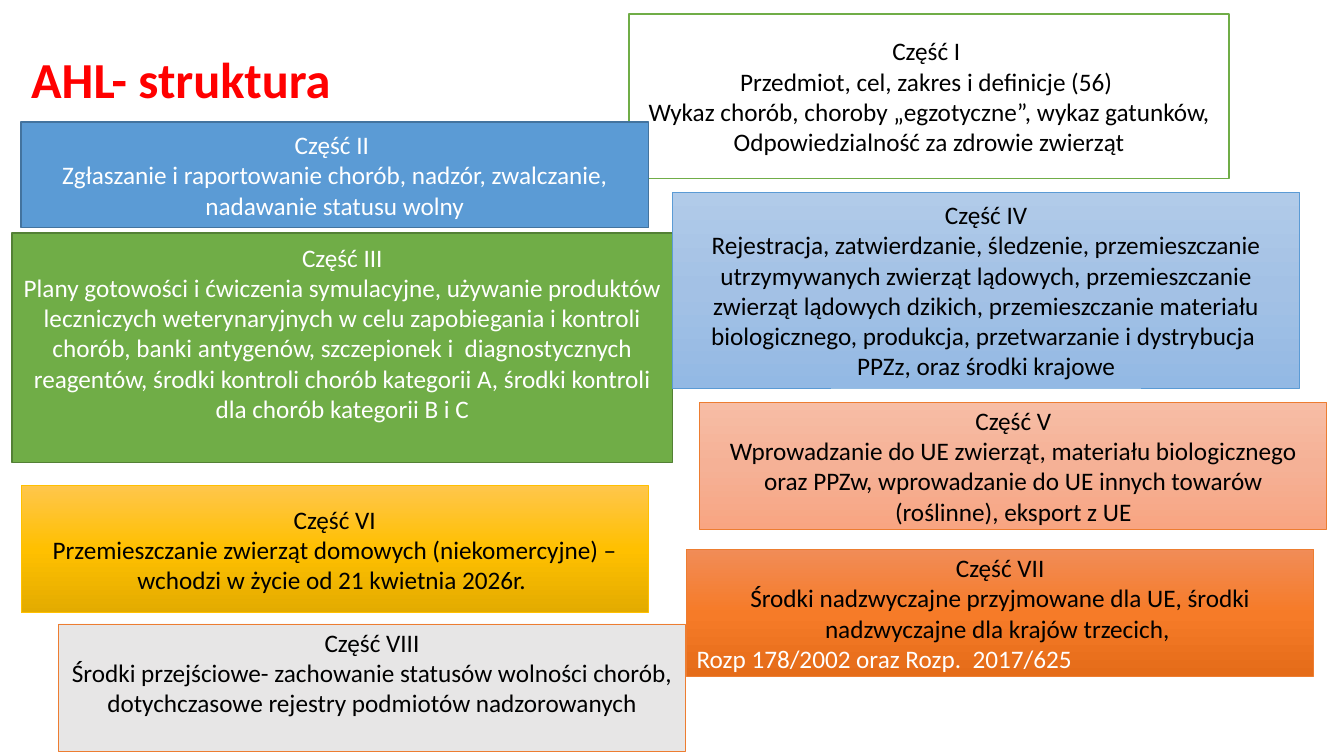
from copy import deepcopy

from pptx import Presentation
from pptx.dml.color import RGBColor
from pptx.enum.shapes import MSO_SHAPE
from pptx.enum.text import MSO_ANCHOR, PP_ALIGN
from pptx.util import Pt

RECTANGLE = MSO_SHAPE.RECTANGLE
MIDDLE, BOTTOM = MSO_ANCHOR.MIDDLE, MSO_ANCHOR.BOTTOM
LEFT, CENTER = PP_ALIGN.LEFT, PP_ALIGN.CENTER

PX = 9144  # EMU, 100 px to the inch
FONT = "Calibri"
TITLE_LAYOUT = 5
DOWNWARD = 270
TEXT_LINE = 30

BLACK = RGBColor(0x00, 0x00, 0x00)
WHITE = RGBColor(0xFF, 0xFF, 0xFF)
RED = RGBColor(0xFF, 0x00, 0x00)
GREEN = RGBColor(0x70, 0xAD, 0x47)
DARK_GREEN = RGBColor(0x53, 0x80, 0x35)
BLUE = RGBColor(0x5B, 0x9B, 0xD5)
DARK_BLUE = RGBColor(0x43, 0x73, 0x9E)
ORANGE = RGBColor(0xED, 0x7D, 0x31)
GOLD = RGBColor(0xFF, 0xC0, 0x00)
GREY = RGBColor(0xE7, 0xE6, 0xE6)
BLUE_FADE = (RGBColor(0xB1, 0xCB, 0xE9), RGBColor(0xA3, 0xC1, 0xE5), RGBColor(0x93, 0xB9, 0xE4))
PEACH_FADE = (RGBColor(0xF7, 0xBD, 0xA5), RGBColor(0xF5, 0xB1, 0x96), RGBColor(0xF8, 0xA5, 0x82))
GOLD_FADE = (RGBColor(0xFF, 0xC6, 0x4B), GOLD, RGBColor(0xE3, 0xAB, 0x00))
ORANGE_FADE = (RGBColor(0xF1, 0x8C, 0x57), RGBColor(0xF6, 0x7B, 0x28), RGBColor(0xE5, 0x6C, 0x19))

TITLE = "AHL- struktura"
TITLE_BOX = (21, 0, 1199, 109)
REGULATIONS = "Rozp 178/2002 oraz Rozp.  2017/625"

# box, fill colours, line colour, line width, text colour, space under the text, paragraphs
PARTS = [
    ((624, 14, 595, 163), (WHITE,), GREEN, 1, BLACK, 0, [
        "Część I ",
        "Przedmiot, cel, zakres i definicje (56) ",
        "Wykaz chorób, choroby „egzotyczne”, wykaz gatunków,",
        "Odpowiedzialność za zdrowie zwierząt"]),
    ((21, 121, 622, 105), (BLUE,), DARK_BLUE, 1, WHITE, 0, [
        "Część II ",
        "Zgłaszanie i raportowanie chorób, nadzór, zwalczanie, nadawanie statusu wolny"]),
    ((12, 231, 655, 228), (GREEN,), DARK_GREEN, 1, WHITE, TEXT_LINE, [
        "Część III",
        "Plany gotowości i ćwiczenia symulacyjne, używanie produktów leczniczych "
        "weterynaryjnych w celu zapobiegania i kontroli chorób, banki antygenów, "
        "szczepionek i  diagnostycznych reagentów, środki kontroli chorób kategorii A, "
        "środki kontroli dla chorób kategorii B i C"]),
    ((667, 191, 622, 194), BLUE_FADE, BLUE, 0.5, BLACK, 0, [
        "Część IV",
        "Rejestracja, zatwierdzanie, śledzenie, przemieszczanie utrzymywanych zwierząt "
        "lądowych, przemieszczanie zwierząt lądowych dzikich, przemieszczanie materiału "
        "biologicznego, produkcja, przetwarzanie i dystrybucja  PPZz, oraz środki krajowe"]),
    ((694, 399, 622, 126), PEACH_FADE, ORANGE, 0.5, BLACK, 0, [
        "Część V",
        "Wprowadzanie do UE zwierząt, materiału biologicznego oraz PPZw, "
        "wprowadzanie do UE innych towarów (roślinne), eksport z UE"]),
    ((21, 482, 622, 126), GOLD_FADE, GOLD, 0.5, BLACK, 0, [
        "Część VI",
        "Przemieszczanie zwierząt domowych (niekomercyjne) – "
        "wchodzi w życie od 21 kwietnia 2026r. "]),
    ((681, 545, 622, 126), ORANGE_FADE, ORANGE, 0.5, BLACK, 0, [
        "Część VII",
        "Środki nadzwyczajne przyjmowane dla UE, środki nadzwyczajne dla krajów trzecich, ",
        REGULATIONS]),
    ((58, 619, 622, 126), (GREY,), ORANGE, 0.5, BLACK, TEXT_LINE, [
        "Część VIII",
        "Środki przejściowe- zachowanie statusów wolności chorób, "
        "dotychczasowe rejestry podmiotów nadzorowanych"]),
]


def to_emu(box):
    return [length * PX for length in box]


def fill_shape(fill, colours):
    """Fill with one solid colour, or with three fading from top to bottom."""
    if len(colours) == 1:
        fill.solid()
        fill.fore_color.rgb = colours[0]
        return
    fill.gradient()
    fill.gradient_angle = DOWNWARD
    last_stop = fill.gradient_stops[-1]._gs
    last_stop.addprevious(deepcopy(last_stop))
    for index, (stop, colour) in enumerate(zip(fill.gradient_stops, colours)):
        stop.position = index / 2
        stop.color.rgb = colour


def add_title(slide):
    title = slide.shapes.title
    title.left, title.top, title.width, title.height = to_emu(TITLE_BOX)
    frame = title.text_frame
    frame.text = TITLE
    frame.word_wrap = True
    frame.vertical_anchor = BOTTOM
    frame.margin_bottom = 0
    paragraph = frame.paragraphs[0]
    paragraph.alignment = LEFT
    paragraph.line_spacing = 0.9
    font = paragraph.font
    font.name, font.size, font.bold = FONT, Pt(36), True
    font.color.rgb = RED


def add_part(slide, box, colours, line_colour, line_width, text_colour, space_under, texts):
    shape = slide.shapes.add_shape(RECTANGLE, *to_emu(box))
    shape.shadow.inherit = False
    fill_shape(shape.fill, colours)
    shape.line.color.rgb = line_colour
    shape.line.width = Pt(line_width)
    frame = shape.text_frame
    frame.word_wrap = True
    frame.vertical_anchor = MIDDLE
    frame.margin_top = 0
    frame.margin_bottom = space_under * PX
    frame.text = "\n".join(texts)
    for paragraph in frame.paragraphs:
        is_regulations = paragraph.text == REGULATIONS
        paragraph.alignment = LEFT if is_regulations else CENTER
        paragraph.font.name, paragraph.font.size = FONT, Pt(18)
        paragraph.font.color.rgb = WHITE if is_regulations else text_colour


def main():
    presentation = Presentation()
    presentation.slide_width, presentation.slide_height = to_emu((1333, 750))
    slide = presentation.slides.add_slide(presentation.slide_layouts[TITLE_LAYOUT])
    add_title(slide)
    for part in PARTS:
        add_part(slide, *part)
    presentation.save("out.pptx")


if __name__ == "__main__":
    main()
